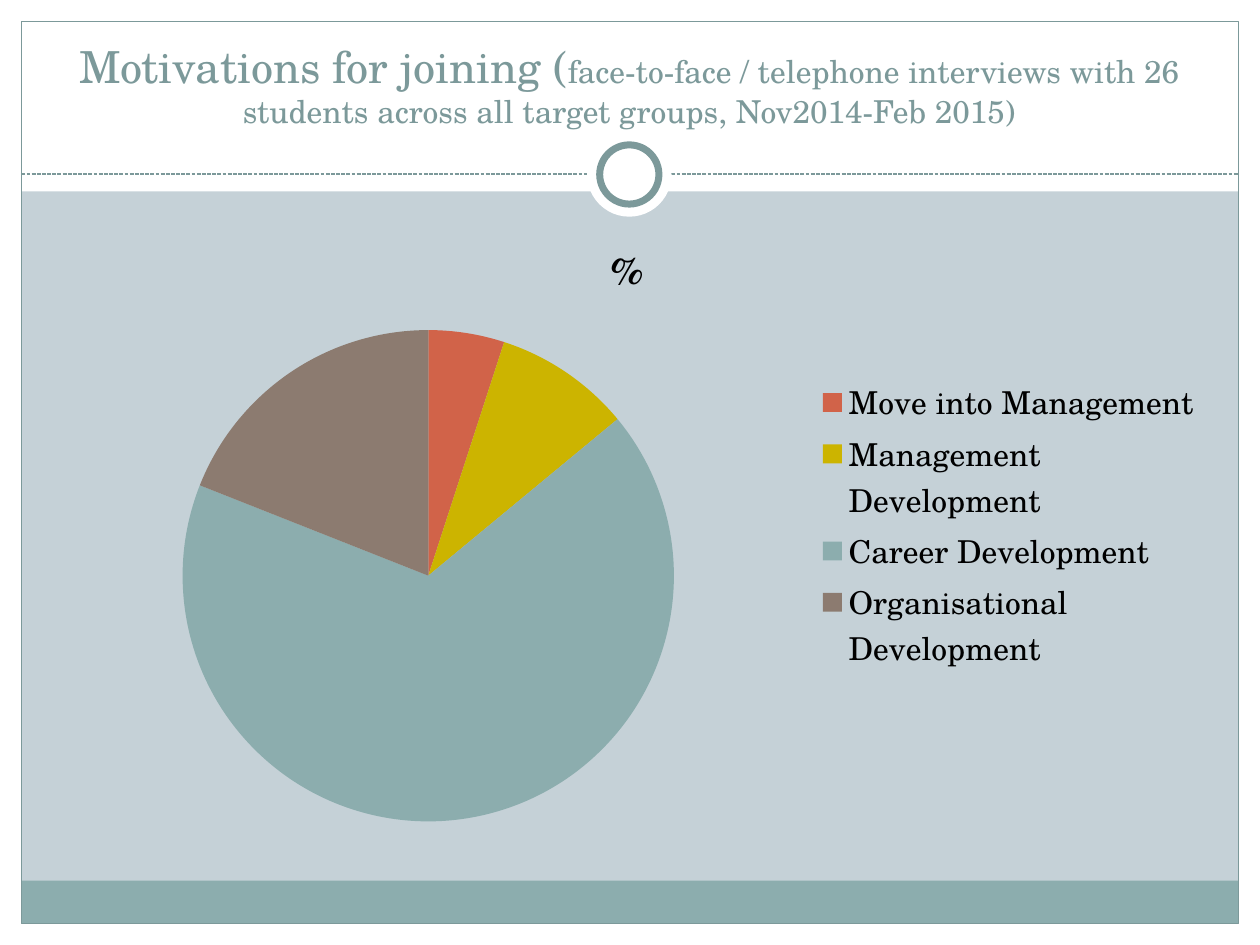
from pptx import Presentation
from pptx.chart.data import CategoryChartData
from pptx.dml.color import RGBColor
from pptx.enum.chart import XL_CHART_TYPE as ChartType, XL_LEGEND_POSITION as LegendPosition
from pptx.enum.dml import MSO_LINE as LineStyle
from pptx.enum.shapes import MSO_CONNECTOR as Connector, MSO_SHAPE as ShapeType
from pptx.enum.text import MSO_ANCHOR as Anchor, PP_ALIGN as Align
from pptx.oxml import parse_xml
from pptx.oxml.ns import nsdecls, qn
from pptx.util import Pt

PX = 9144
WIDTH, HEIGHT = 1000, 750
FONT = "TeX Gyre Schola"
WHITE = RGBColor(0xFF, 0xFF, 0xFF)
BLACK = RGBColor(0, 0, 0)
BACKGROUND = RGBColor(0xC5, 0xD1, 0xD7)
ACCENT = RGBColor(0x7C, 0x99, 0x9A)
RED = RGBColor(0xD1, 0x63, 0x49)
YELLOW = RGBColor(0xCC, 0xB4, 0x00)
TEAL = RGBColor(0x8C, 0xAD, 0xAE)
BROWN = RGBColor(0x8C, 0x7B, 0x70)

MOTIVATIONS = [
    ("Move into Management", 5, RED),
    ("Management Development", 9, YELLOW),
    ("Career Development", 67, TEAL),
    ("Organisational Development", 19, BROWN),
]
TITLE_PARTS = [
    ("Motivations for joining (", 25.2),
    ("face-to-face / telephone interviews with 26 students across all target groups, "
     "Nov2014-Feb 2015)", 18),
]


def scaled(*lengths):
    return [length * PX for length in lengths]


def add_shape(slide, kind, box, fill=None, line=None, line_width=0.75):
    shape = slide.shapes.add_shape(kind, *scaled(*box))
    shape.shadow.inherit = False
    if fill is None:
        shape.fill.background()
    else:
        shape.fill.solid()
        shape.fill.fore_color.rgb = fill
    if line is None:
        shape.line.fill.background()
    else:
        shape.line.color.rgb = line
        shape.line.width = Pt(line_width)
    return shape


def add_frame(slide, box, header_height):
    left, top, width, height = box
    margin, footer = 17, 34
    right, bottom = left + width, top + height
    inner_width = width - 2 * margin
    for edge in (
        (left, bottom - margin, width, margin),
        (left, top, width, header_height),
        (left, top, margin, height),
        (right - margin, top, margin, height),
    ):
        add_shape(slide, ShapeType.RECTANGLE, edge, WHITE)
    add_shape(slide, ShapeType.RECTANGLE,
              (left + margin, bottom - margin - footer, inner_width, footer), TEAL)
    add_shape(slide, ShapeType.RECTANGLE,
              (left + margin, top + margin, inner_width, height - 2 * margin), line=ACCENT)


def add_divider(slide, box):
    left, top, width, height = box
    middle = top + height // 2
    divider = slide.shapes.add_connector(
        Connector.STRAIGHT, *scaled(left, middle, left + width, middle))
    divider.line.color.rgb = ACCENT
    divider.line.width = Pt(0.75)
    divider.line.dash_style = LineStyle.SQUARE_DOT
    divider._element.spPr.append(parse_xml(f"<a:effectLst {nsdecls('a')}/>"))
    for size, line in ((height, None), (height - 20, ACCENT)):
        inset = (height - size) // 2
        circle = (left + (width - size) // 2, top + inset, size, size)
        add_shape(slide, ShapeType.OVAL, circle, WHITE, line, 4)


def add_title(slide, box):
    text_frame = slide.shapes.add_textbox(*scaled(*box)).text_frame
    text_frame.word_wrap = True
    text_frame.vertical_anchor = Anchor.BOTTOM
    paragraph = text_frame.paragraphs[0]
    paragraph.alignment = Align.CENTER
    for text, size in TITLE_PARTS:
        run = paragraph.add_run()
        run.text = text
        set_font(run.font, size, ACCENT)


def set_font(font, size, color, bold=False):
    font.name = FONT
    font.size = Pt(size)
    font.color.rgb = color
    font.bold = bold


def set_layout(element, x, y, width, height, inner=False):
    target = '<c:layoutTarget val="inner"/>' if inner else ""
    layout = parse_xml(
        f'<c:layout {nsdecls("c")}><c:manualLayout>{target}'
        '<c:xMode val="edge"/><c:yMode val="edge"/>'
        f'<c:x val="{x}"/><c:y val="{y}"/><c:w val="{width}"/><c:h val="{height}"/>'
        "</c:manualLayout></c:layout>")
    for previous in element.findall(qn("c:layout")):
        element.remove(previous)
    element.insert(0 if inner else 1, layout)


def add_motivation_chart(slide, box):
    names, values, colors = zip(*MOTIVATIONS)
    chart_data = CategoryChartData()
    chart_data.categories = names
    chart_data.add_series("%", values)
    chart = slide.shapes.add_chart(ChartType.PIE, *scaled(*box), chart_data).chart
    set_font(chart.font, 18, BLACK)

    chart.has_title = True
    title = chart.chart_title.text_frame
    title.text = "%"
    set_font(title.paragraphs[0].runs[0].font, 21.6, BLACK, bold=True)

    chart.has_legend = True
    chart.legend.position = LegendPosition.RIGHT
    chart.legend.include_in_layout = False
    set_layout(chart.legend._element, 0.66, 0.26, 0.33, 0.48)

    plot = chart.plots[0]
    plot.vary_by_categories = True
    set_layout(chart._chartSpace.chart.plotArea, 0.12, 0.19, 0.42, 0.78, inner=True)
    for index, color in enumerate(colors):
        fill = plot.series[0].points[index].format.fill
        fill.solid()
        fill.fore_color.rgb = color


def main():
    presentation = Presentation()
    presentation.slide_width, presentation.slide_height = scaled(WIDTH, HEIGHT)
    slide = presentation.slides.add_slide(presentation.slide_layouts[6])
    slide.background.fill.solid()
    slide.background.fill.fore_color.rgb = BACKGROUND
    add_frame(slide, (0, 0, WIDTH, HEIGHT), 152)
    add_divider(slide, (17, 105, 966, 67))
    add_title(slide, (33, 25, 933, 83))
    add_motivation_chart(slide, (33, 167, 930, 500))
    presentation.save("out.pptx")


if __name__ == "__main__":
    main()
